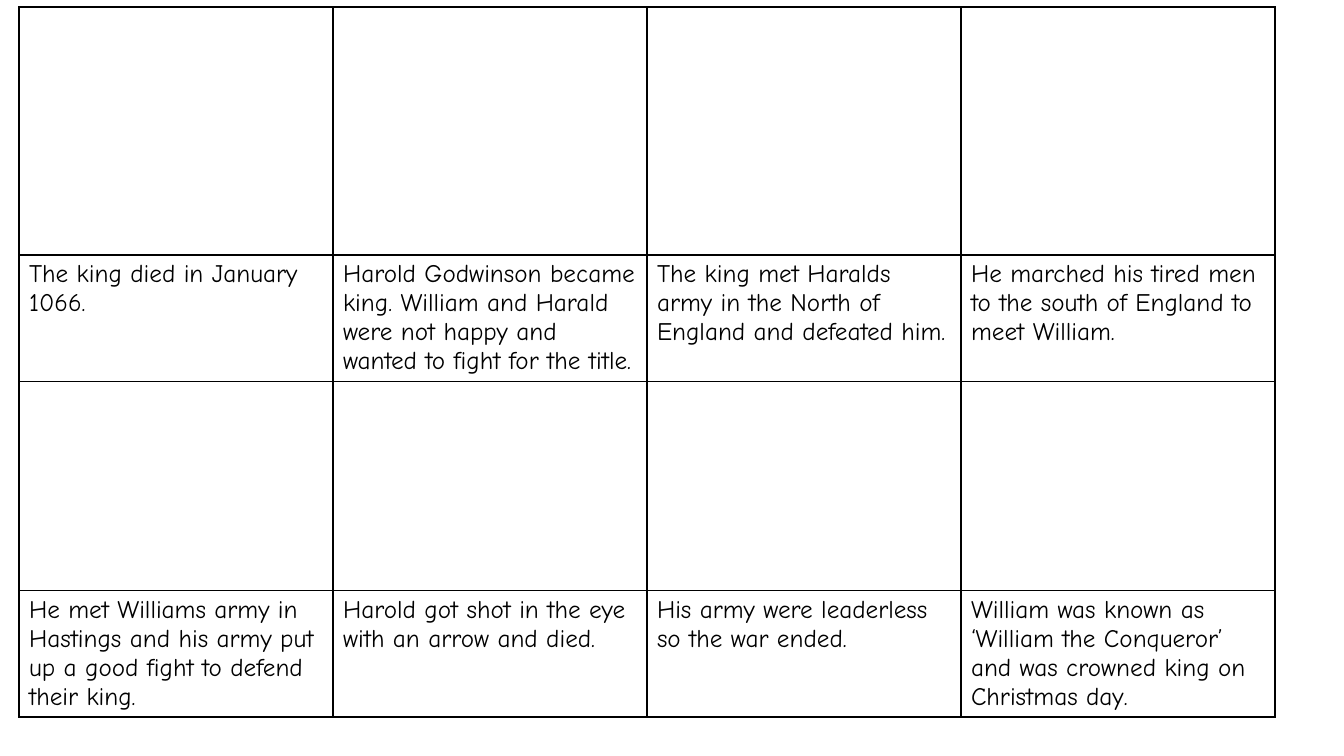
from lxml.etree import SubElement
from pptx import Presentation
from pptx.dml.color import RGBColor as RGB
from pptx.oxml.ns import qn
from pptx.util import Emu, Pt

FONT = "Comic Neue"
BLACK = "000000"
COL_W = 314
ROW_HEIGHTS = [248, 126, 209, 126]
CAPTIONS = {
    1: [
        "The king died in January 1066.",
        "Harold Godwinson became king. William and Harald were not happy "
        "and wanted to fight for the title.",
        "The king met Haralds army in the North of England and defeated him.",
        "He marched his tired men to the south of England to meet William.",
    ],
    3: [
        "He met Williams army in Hastings and his army put up a good fight "
        "to defend their king.",
        "Harold got shot in the eye with an arrow and died.",
        "His army were leaderless so the war ended.",
        "William was known as ‘William the Conqueror’ and was crowned king "
        "on Christmas day.",
    ],
}


def px(n):
    """Turn pixels into EMU."""
    return Emu(round(n * 914400 / 100.8))


def color(hex_string):
    """Turn a hex string into a colour."""
    return RGB.from_string(hex_string)


def style_cell(cell):
    """Give a cell thin borders on all sides and no fill."""
    tcPr = cell._tc.get_or_add_tcPr()
    for side in ("a:lnL", "a:lnR", "a:lnT", "a:lnB"):
        ln = SubElement(tcPr, qn(side), w=str(Pt(1)))
        fill = SubElement(ln, qn("a:solidFill"))
        SubElement(fill, qn("a:srgbClr"), val=BLACK)
    cell.fill.background()


def write_caption(cell, text):
    """Write a caption into a cell."""
    r = cell.text_frame.paragraphs[0].add_run()
    r.text = text
    r.font.name = FONT
    r.font.size = Pt(18)
    r.font.bold = False
    r.font.color.rgb = color(BLACK)


def add_storyboard(s, left, top):
    """Add the table of empty drawing frames with captions below them."""
    cols = len(CAPTIONS[1])
    table = s.shapes.add_table(
        len(ROW_HEIGHTS), cols, px(left), px(top),
        px(COL_W * cols), px(sum(ROW_HEIGHTS))).table
    table.first_row = table.horz_banding = False
    for col in table.columns:
        col.width = px(COL_W)
    for row, height in zip(table.rows, ROW_HEIGHTS):
        row.height = px(height)
    for cell in table.iter_cells():
        style_cell(cell)
    for row, captions in CAPTIONS.items():
        for col, text in enumerate(captions):
            write_caption(table.cell(row, col), text)


def main():
    """Build the slide and save it."""
    prs = Presentation()
    prs.slide_width, prs.slide_height = px(1344), px(756)
    s = prs.slides.add_slide(prs.slide_layouts[6])
    add_storyboard(s, 19, 7)
    prs.save("out.pptx")


if __name__ == "__main__":
    main()
